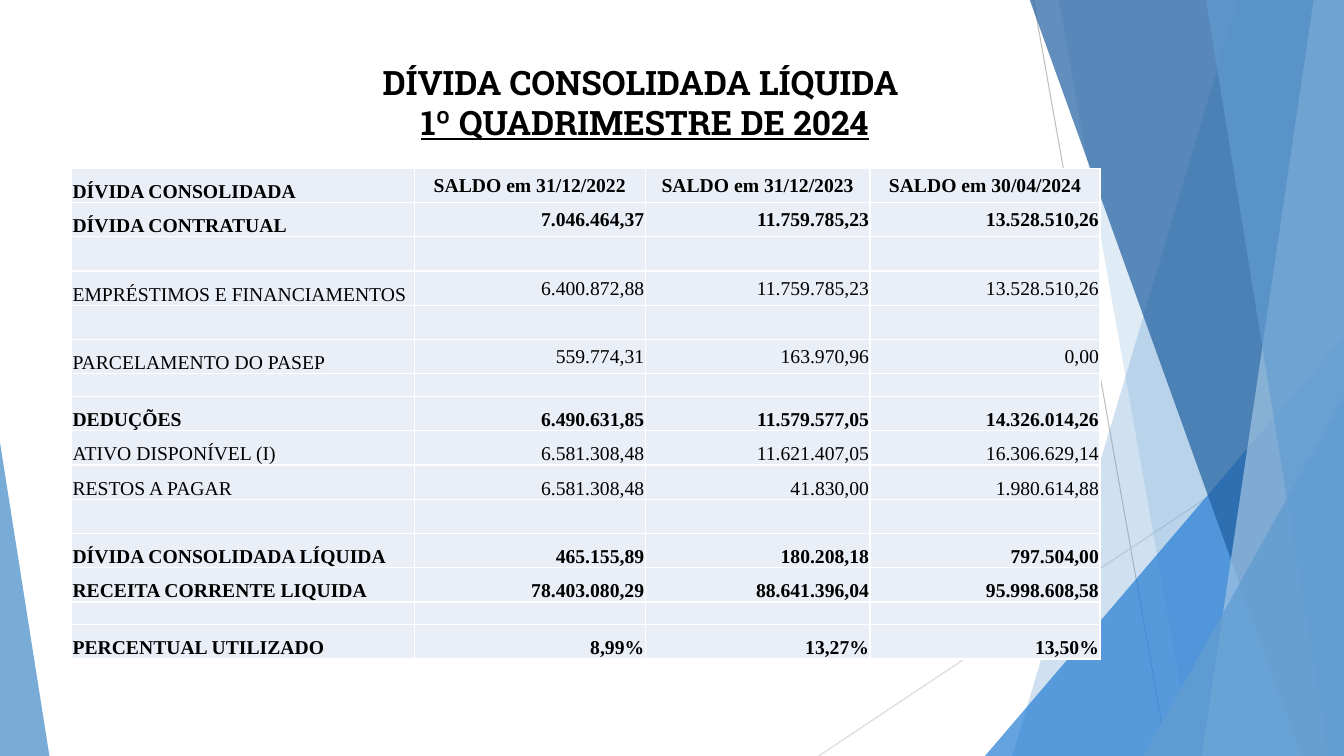
from lxml.etree import SubElement
from pptx import Presentation
from pptx.dml.color import RGBColor
from pptx.enum.shapes import MSO_CONNECTOR as Connector, MSO_SHAPE as Preset
from pptx.enum.text import MSO_ANCHOR as Anchor, MSO_AUTO_SIZE as AutoSize, PP_ALIGN as Align
from pptx.oxml.ns import qn
from pptx.util import Pt

PX = 9144  # EMU; 100 px make an inch
WIDTH, HEIGHT = 1333, 750
COLORS = {
    "text": "000000", "cell": "EAEFF7", "gray": "BFBFBF", "light gray": "D9D9D9",
    "sky": "629DD1", "pale sky": "A1C4E3", "blue": "297FD5", "navy": "1F5FA0",
}
COLUMN_WIDTHS = [340, 229, 223, 228]
ROW_HEIGHT, GAP_HEIGHT = 34, 22
# height, bold, anchor of the figures, texts
ROWS = [
    (ROW_HEIGHT, True, Anchor.MIDDLE, ["DÍVIDA CONSOLIDADA", "SALDO em 31/12/2022",
                                       "SALDO em 31/12/2023", "SALDO em 30/04/2024"]),
    (ROW_HEIGHT, True, Anchor.MIDDLE, ["DÍVIDA CONTRATUAL", "7.046.464,37", "11.759.785,23", "13.528.510,26"]),
    (ROW_HEIGHT, False, Anchor.MIDDLE, [""] * 4),
    (ROW_HEIGHT, False, Anchor.MIDDLE, ["EMPRÉSTIMOS E FINANCIAMENTOS", "6.400.872,88",
                                        "11.759.785,23", "13.528.510,26"]),
    (ROW_HEIGHT, False, Anchor.MIDDLE, [""] * 4),
    (ROW_HEIGHT, False, Anchor.MIDDLE, ["PARCELAMENTO DO PASEP", "559.774,31", "163.970,96", "0,00"]),
    (GAP_HEIGHT, False, Anchor.MIDDLE, [""] * 4),
    (ROW_HEIGHT, True, Anchor.BOTTOM, ["DEDUÇÕES", "6.490.631,85", "11.579.577,05", "14.326.014,26"]),
    (ROW_HEIGHT, False, Anchor.BOTTOM, ["ATIVO DISPONÍVEL (I)", "6.581.308,48", "11.621.407,05", "16.306.629,14"]),
    (ROW_HEIGHT, False, Anchor.BOTTOM, ["RESTOS A PAGAR", "6.581.308,48", "41.830,00", "1.980.614,88"]),
    (ROW_HEIGHT, False, Anchor.BOTTOM, [""] * 4),
    (ROW_HEIGHT, True, Anchor.BOTTOM, ["DÍVIDA CONSOLIDADA LÍQUIDA", "465.155,89", "180.208,18", "797.504,00"]),
    (ROW_HEIGHT, True, Anchor.BOTTOM, ["RECEITA CORRENTE LIQUIDA", "78.403.080,29",
                                       "88.641.396,04", "95.998.608,58"]),
    (GAP_HEIGHT, False, Anchor.BOTTOM, [""] * 4),
    (ROW_HEIGHT, True, Anchor.BOTTOM, ["PERCENTUAL UTILIZADO", "8,99%", "13,27%", "13,50%"]),
]


def rgb(name):
    return RGBColor.from_string(COLORS[name])


def px(*lengths):
    return [length * PX for length in lengths]


def set_font(font, name, size, bold):
    font.name, font.size, font.bold = name, Pt(size), bold
    font.color.rgb = rgb("text")


def paint(shape, color, opacity):
    """Give the shape a translucent fill, opacity in percent, and no line."""
    shape.shadow.inherit = False
    shape.line.fill.background()
    shape.fill.solid()
    shape.fill.fore_color.rgb = rgb(color)
    fill_color = shape.element.spPr.find(qn("a:solidFill"))[0]
    SubElement(fill_color, qn("a:alpha"), val=str(opacity * 1000))


def add_line(slide, start, end, color):
    line = slide.shapes.add_connector(Connector.STRAIGHT, *px(*start, *end))
    line.line.color.rgb = rgb(color)
    line.line.width = Pt(0.75)
    SubElement(line.element.spPr, qn("a:effectLst"))


def add_band(slide, top_x, bottom_x, color, opacity):
    """Fill from a slanted left edge to the right side of the slide."""
    builder = slide.shapes.build_freeform(top_x, -1, scale=PX)
    builder.add_line_segments([(WIDTH, -1), (WIDTH, HEIGHT), (bottom_x, HEIGHT)], close=True)
    paint(builder.convert_to_shape(), color, opacity)


def add_triangle(slide, left, top, width, apex, color, opacity):
    """Stand a triangle on the bottom edge of the slide."""
    triangle = slide.shapes.add_shape(Preset.ISOSCELES_TRIANGLE, *px(left, top, width, HEIGHT - top))
    triangle.adjustments[0] = apex
    paint(triangle, color, opacity)


def add_background(slide):
    add_line(slide, (1025, 0), (1158, HEIGHT), "gray")
    add_line(slide, (WIDTH, 403), (812, HEIGHT), "light gray")
    add_band(slide, 1228, 1004, "sky", 30)
    add_band(slide, 1050, 1183, "sky", 20)
    add_triangle(slide, 977, 333, 356, 1, "blue", 72)
    add_band(slide, 1021, 1291, "navy", 70)
    add_band(slide, 1303, 1192, "pale sky", 70)
    add_band(slide, 1196, 1318, "sky", 65)
    add_triangle(slide, 1134, 393, 199, 1, "sky", 80)
    add_triangle(slide, 0, 439, 49, 0, "sky", 85)


def add_title(slide):
    title = slide.shapes.title
    title.left, title.top, title.width, title.height = px(175, 56, 929, 107)
    frame = title.text_frame
    frame.word_wrap = True
    frame.auto_size = AutoSize.NONE
    frame.vertical_anchor = Anchor.TOP
    paragraph = frame.paragraphs[0]
    paragraph.alignment = Align.CENTER
    set_font(paragraph.font, "Roboto Slab", 24, True)
    paragraph.add_run().text = "DÍVIDA CONSOLIDADA LÍQUIDA "
    paragraph.add_line_break()
    period = paragraph.add_run()
    period.text = "1º QUADRIMESTRE DE 2024"
    period.font.underline = True
    slide.shapes.element.append(title.element)  # in front of the background


def fill_cell(cell, text, alignment, anchor, bold):
    cell.fill.solid()
    cell.fill.fore_color.rgb = rgb("cell")
    cell.margin_left, cell.margin_right, cell.margin_top, cell.margin_bottom = px(1, 1, 1, 0)
    cell.vertical_anchor = anchor
    paragraph = cell.text_frame.paragraphs[0]
    paragraph.alignment = alignment
    set_font(paragraph.font, "Times New Roman", 14, bold)
    if text:
        paragraph.add_run().text = text
    else:  # keeps the blank row as low as its height says
        end = SubElement(paragraph._p, qn("a:endParaRPr"), sz="1400")
        SubElement(end, qn("a:latin"), typeface="Times New Roman")


def add_debt_table(slide):
    height = sum(row[0] for row in ROWS)
    frame = slide.shapes.add_table(len(ROWS), len(COLUMN_WIDTHS),
                                   *px(71, 167, sum(COLUMN_WIDTHS), height))
    table = frame.table
    table.first_row = table.horz_banding = False
    for column, width in zip(table.columns, COLUMN_WIDTHS):
        column.width = width * PX
    for index, (row_height, bold, anchor, texts) in enumerate(ROWS):
        table.rows[index].height = row_height * PX
        figure_alignment = Align.RIGHT if index else Align.CENTER
        for column, text in enumerate(texts):
            if column:
                fill_cell(table.cell(index, column), text, figure_alignment, anchor, bold)
            else:
                fill_cell(table.cell(index, column), text, Align.LEFT, Anchor.BOTTOM, bold)


def main():
    presentation = Presentation()
    presentation.slide_width, presentation.slide_height = px(WIDTH, HEIGHT)
    slide = presentation.slides.add_slide(presentation.slide_layouts[5])
    add_background(slide)
    add_title(slide)
    add_debt_table(slide)
    presentation.save("out.pptx")


if __name__ == "__main__":
    main()
